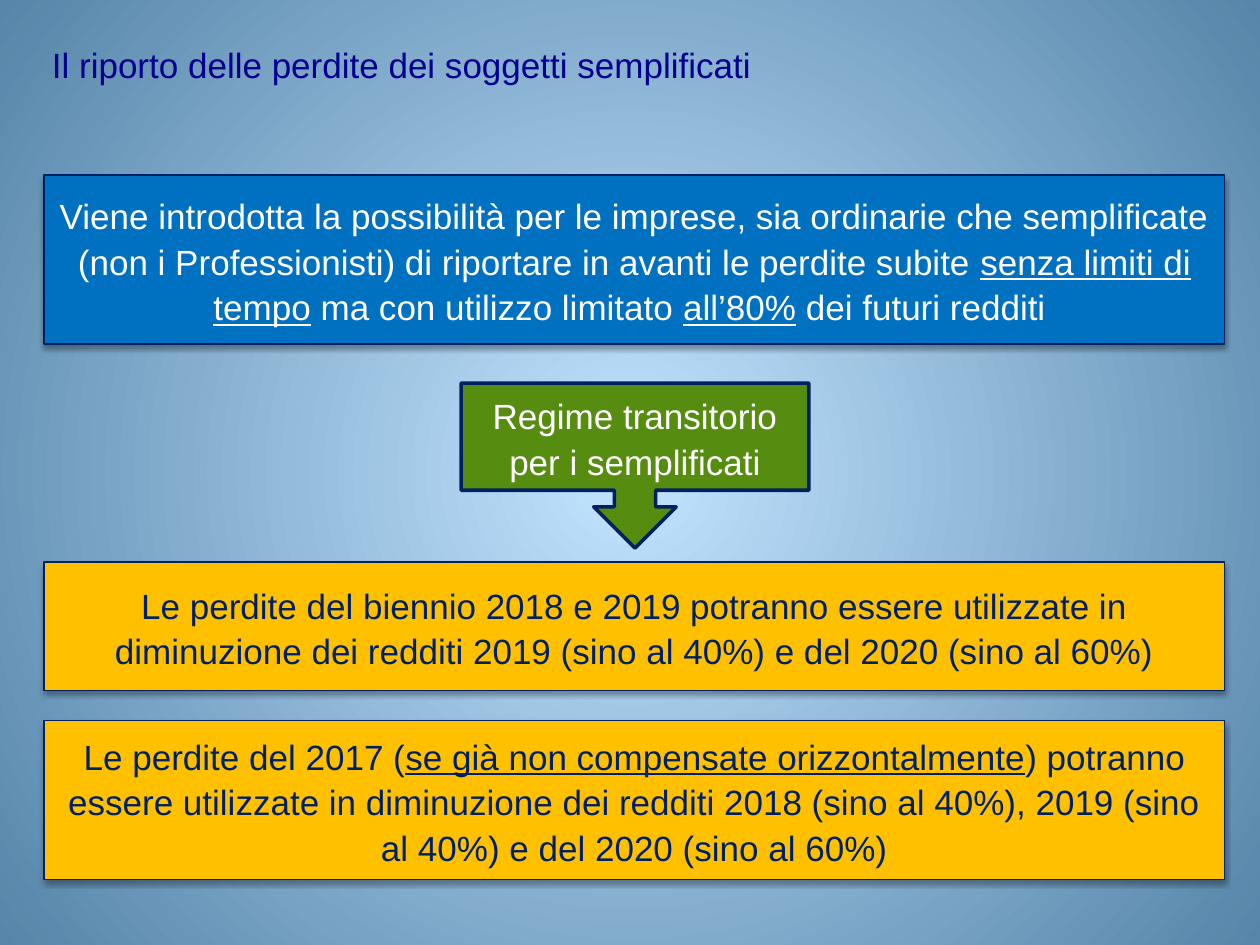
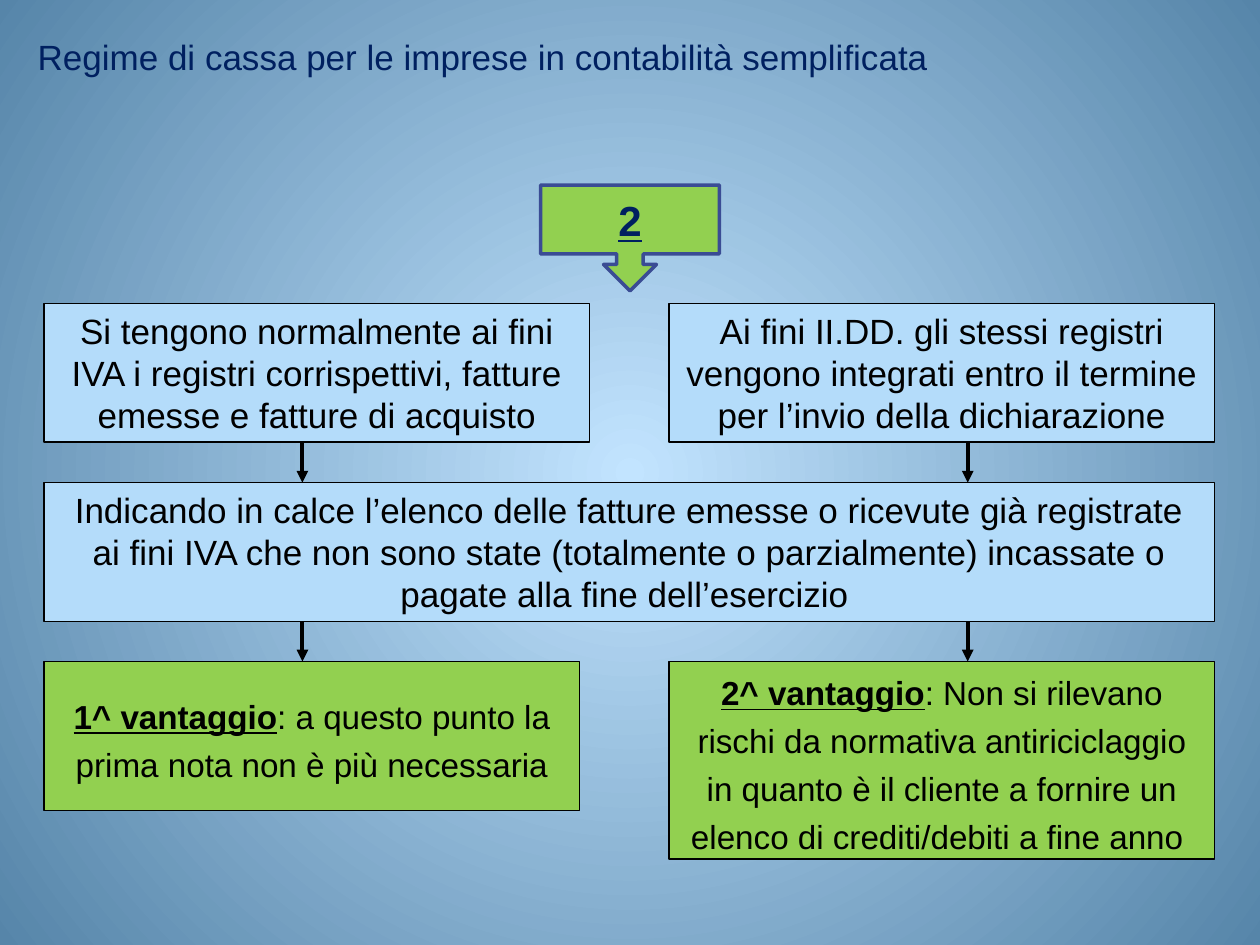
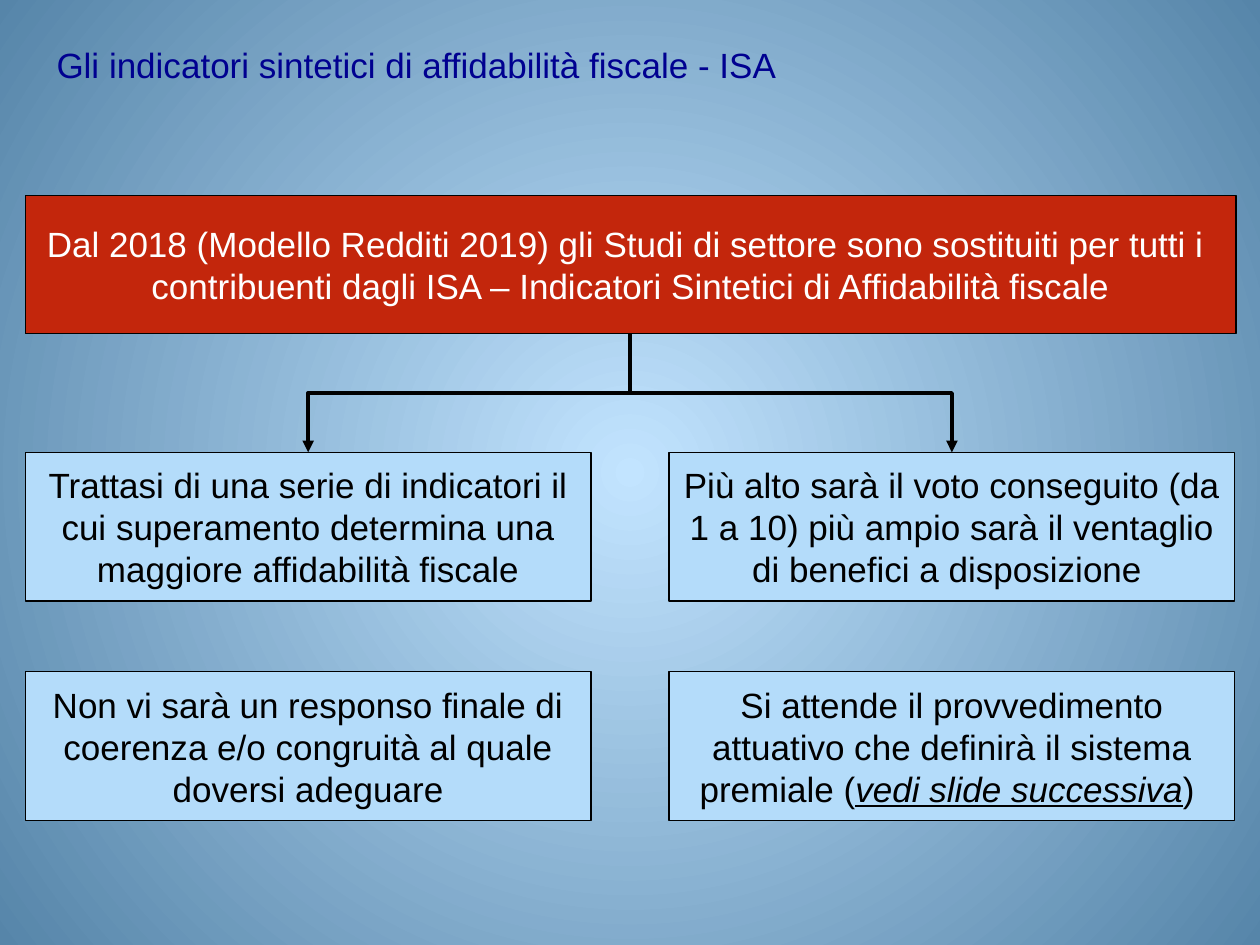
"""Build three slides on simplified accounting, loss carry-forward and ISA."""
from lxml import etree
from pptx import Presentation
from pptx.dml.color import RGBColor
from pptx.enum.shapes import MSO_CONNECTOR as CONNECTOR, MSO_SHAPE as SHAPE
from pptx.enum.text import MSO_ANCHOR as ANCHOR, PP_ALIGN as ALIGN
from pptx.oxml import parse_xml
from pptx.oxml.ns import nsdecls, qn
from pptx.util import Pt

COLORS = {
    "glow": "C2E4FF", "edge": "5685A9", "navy": "002060", "title": "000090",
    "blue": "0070C0", "amber": "FFC000", "forest": "568D11", "lime": "92D050",
    "indigo": "3A4C94", "sky": "B4DCFA", "red": "C3260C",
    "black": "000000", "white": "FFFFFF",
}


def rgb(name):
    return RGBColor.from_string(COLORS[name])


class Deck:
    font = "Arial"
    size = 20

    def __init__(self):
        self.presentation = Presentation()
        self.presentation.slide_width = Pt(720)
        self.presentation.slide_height = Pt(540)
        self.slide = None
        self.paint_background()

    def paint_background(self):
        master = self.presentation.slide_master
        fill = master.background.fill
        fill.gradient()
        for stop, name in zip(fill.gradient_stops, ("glow", "edge")):
            stop.color.rgb = rgb(name)
        linear = next(master.element.iter(qn("a:lin")))
        linear.getparent().replace(linear, parse_xml(
            f'<a:path {nsdecls("a")} path="circle">'
            '<a:fillToRect l="50000" t="50000" r="50000" b="50000"/></a:path>'))

    def add_slide(self):
        self.slide = self.presentation.slides.add_slide(self.presentation.slide_layouts[6])

    def add_text(self, shape, paragraphs, color, size=None, align=ALIGN.CENTER,
                 spacing=None, before=None, wrap=True):
        frame = shape.text_frame
        frame.word_wrap = wrap
        frame.vertical_anchor = ANCHOR.MIDDLE
        for index, runs in enumerate(paragraphs):
            paragraph = frame.add_paragraph() if index else frame.paragraphs[0]
            paragraph.alignment = align
            paragraph.line_spacing = spacing
            paragraph.space_before = before
            for text, marks in runs:
                run = paragraph.add_run()
                run.text = text
                run.font.name = self.font
                run.font.size = Pt(size or self.size)
                run.font.color.rgb = rgb(color)
                run.font.bold = "b" in marks
                run.font.italic = "i" in marks
                run.font.underline = "u" in marks

    def title(self, text, left, top, width, height, color="title", align=ALIGN.LEFT, **style):
        box = self.slide.shapes.add_textbox(Pt(left), Pt(top), Pt(width), Pt(height))
        self.add_text(box, [[(text, "")]], color, align=align, **style)

    def box(self, paragraphs, left, top, width, height, fill="sky", color="black",
            line="black", weight=0.75, kind=SHAPE.RECTANGLE, shadow=False, **style):
        shape = self.slide.shapes.add_shape(kind, Pt(left), Pt(top), Pt(width), Pt(height))
        shape.shadow.inherit = False
        shape.fill.solid()
        shape.fill.fore_color.rgb = rgb(fill)
        shape.line.color.rgb = rgb(line)
        shape.line.width = Pt(weight)
        if shadow:
            effects = next(shape.element.iter(qn("a:effectLst")))
            effects.append(parse_xml(
                f'<a:outerShdw {nsdecls("a")} blurRad="{Pt(3.1)}" dist="{Pt(1.8)}" '
                'dir="5400000" rotWithShape="0"><a:srgbClr val="000000">'
                '<a:alpha val="35000"/></a:srgbClr></a:outerShdw>'))
        self.add_text(shape, paragraphs, color, **style)

    def callout(self, paragraphs, left, top, width, height, **style):
        self.box(paragraphs, left, top, width, height, weight=2,
                 kind=SHAPE.DOWN_ARROW_CALLOUT, **style)

    def connector(self, kind, start_x, start_y, end_x, end_y):
        connector = self.slide.shapes.add_connector(
            kind, Pt(start_x), Pt(start_y), Pt(end_x), Pt(end_y))
        connector.line.color.rgb = rgb("black")
        connector.line.width = Pt(2.25)
        outline = next(connector.element.iter(qn("a:ln")))
        etree.SubElement(outline, qn("a:tailEnd"), type="triangle")
        etree.SubElement(connector.element.spPr, qn("a:effectLst"))
        return connector

    def arrow(self, x, top, bottom):
        self.connector(CONNECTOR.STRAIGHT, x, top, x, bottom)

    def elbow(self, start_x, top, end_x, bottom):
        side = 1 if end_x > start_x else -1
        center_x, center_y = (start_x + end_x) / 2, (top + bottom) / 2
        drop, reach = side * (bottom - top) / 2, abs(end_x - start_x) / 2
        connector = self.connector(CONNECTOR.ELBOW, center_x + drop, center_y - reach,
                                   center_x - drop, center_y + reach)
        frame = next(connector.element.iter(qn("a:xfrm")))
        frame.set("rot", str((180 + side * 90) * 60000))


def losses_slide(deck):
    deck.add_slide()
    bands = [
        (100.1, 96.5, "blue", "white", [
            ("Viene introdotta la possibilità per le imprese, sia ordinarie che semplificate "
             "(non i Professionisti) di riportare in avanti le perdite subite ", ""),
            ("senza limiti di tempo", "u"), (" ma con utilizzo limitato ", ""),
            ("all’80%", "u"), (" dei futuri redditi ", "")]),
        (321.1, 73.4, "amber", "navy", [
            ("Le perdite del biennio 2018 e 2019 potranno essere utilizzate in diminuzione "
             "dei redditi 2019 (sino al 40%) e del 2020 (sino al 60%)", "")]),
        (411.8, 90.7, "amber", "navy", [
            ("Le perdite del 2017 (", ""), ("se già non compensate orizzontalmente", "u"),
            (") potranno essere utilizzate in diminuzione dei redditi 2018 (sino al 40%), "
             "2019 (sino al 40%) e del 2020 (sino al 60%)", "")]),
    ]
    for top, height, fill, color, runs in bands:
        deck.box([runs], 25.2, top, 674.7, height, fill=fill, color=color, line="navy",
                 shadow=True, spacing=Pt(26))
    deck.callout([[("Regime transitorio per i semplificati", "")]], 263.5, 218.9, 198.7, 94.3,
                 fill="forest", color="white", line="navy", spacing=Pt(26))
    deck.title("Il riporto delle perdite dei soggetti semplificati",
               8.6, 20.2, 442.1, 33.8, align=ALIGN.CENTER)


def cash_slide(deck):
    deck.add_slide()
    left, right, width, height = 25.2, 382.3, 311.8, 79.2
    registers, listing, benefits = 173.5, 275.8, 378
    deck.title("Regime di cassa per le imprese in contabilità semplificata",
               14.4, 15.1, 601.2, 37.4, color="navy", spacing=0.9, before=Pt(10))
    deck.callout([[("2", "bu")]], 308.9, 105.8, 102.2, 60.5,
                 fill="lime", color="navy", line="indigo", size=24)
    deck.box([[("Si tengono normalmente ai fini IVA i registri corrispettivi, fatture emesse "
                "e fatture di acquisto", "")]], left, registers, width, height)
    deck.box([[("Ai fini II.DD. gli stessi registri vengono integrati entro il termine per "
                "l’invio della dichiarazione", "")]], right, registers, width, height)
    deck.box([[("Indicando in calce l’elenco delle fatture emesse o ricevute già registrate ai "
                "fini IVA che non sono state (totalmente o parzialmente) incassate o pagate "
                "alla fine dell’esercizio ", "")]],
             left, listing, right + width - left, height)
    advantages = [
        (left, 306, 85, "1^ vantaggio", ": a questo punto la prima nota non è più necessaria"),
        (right, width, 113, "2^ vantaggio",
         ": Non si rilevano rischi da normativa antiriciclaggio in quanto è il cliente a "
         "fornire un elenco di crediti/debiti a fine anno "),
    ]
    for x, box_width, box_height, label, text in advantages:
        deck.box([[(label, "bu"), (text, "")]], x, benefits, box_width, box_height,
                 fill="lime", size=19, spacing=1.2)
    for x in (172.8, 553):
        deck.arrow(x, registers + height, listing)
        deck.arrow(x, listing + height, benefits)


def isa_slide(deck):
    deck.add_slide()
    columns, rows, width, height = (14.4, 382.3), (258.5, 383.8), 323.3, 85
    header_top, header_height = 111.6, 79.2
    deck.title("Gli indicatori sintetici di affidabilità fiscale - ISA", 25.2, 20.2, 459.4, 33.8)
    deck.box([
        [("Dal 2018 (Modello Redditi 2019) gli Studi di settore sono sostituiti per tutti i ", "")],
        [("contribuenti dagli ISA – Indicatori Sintetici di Affidabilità fiscale", "")],
    ], columns[0], header_top, 691.9, header_height, fill="red", color="white", wrap=False)
    cells = [
        [("Trattasi di una serie di indicatori il cui superamento determina una maggiore "
          "affidabilità fiscale", "")],
        [("Più alto sarà il voto conseguito (da 1 a 10) più ampio sarà il ventaglio di "
          "benefici a disposizione ", "")],
        [("Non vi sarà un responso finale di coerenza e/o congruità al quale doversi "
          "adeguare", "")],
        [("Si attende il provvedimento attuativo che definirà il sistema premiale (", ""),
         ("vedi slide successiva", "iu"), (") ", "")],
    ]
    for index, runs in enumerate(cells):
        deck.box([runs], columns[index % 2], rows[index // 2], width, height)
    for left in columns:
        deck.elbow(360, header_top + header_height, left + width / 2, rows[0])


def main():
    deck = Deck()
    losses_slide(deck)
    cash_slide(deck)
    isa_slide(deck)
    deck.presentation.save("out.pptx")


if __name__ == "__main__":
    main()
